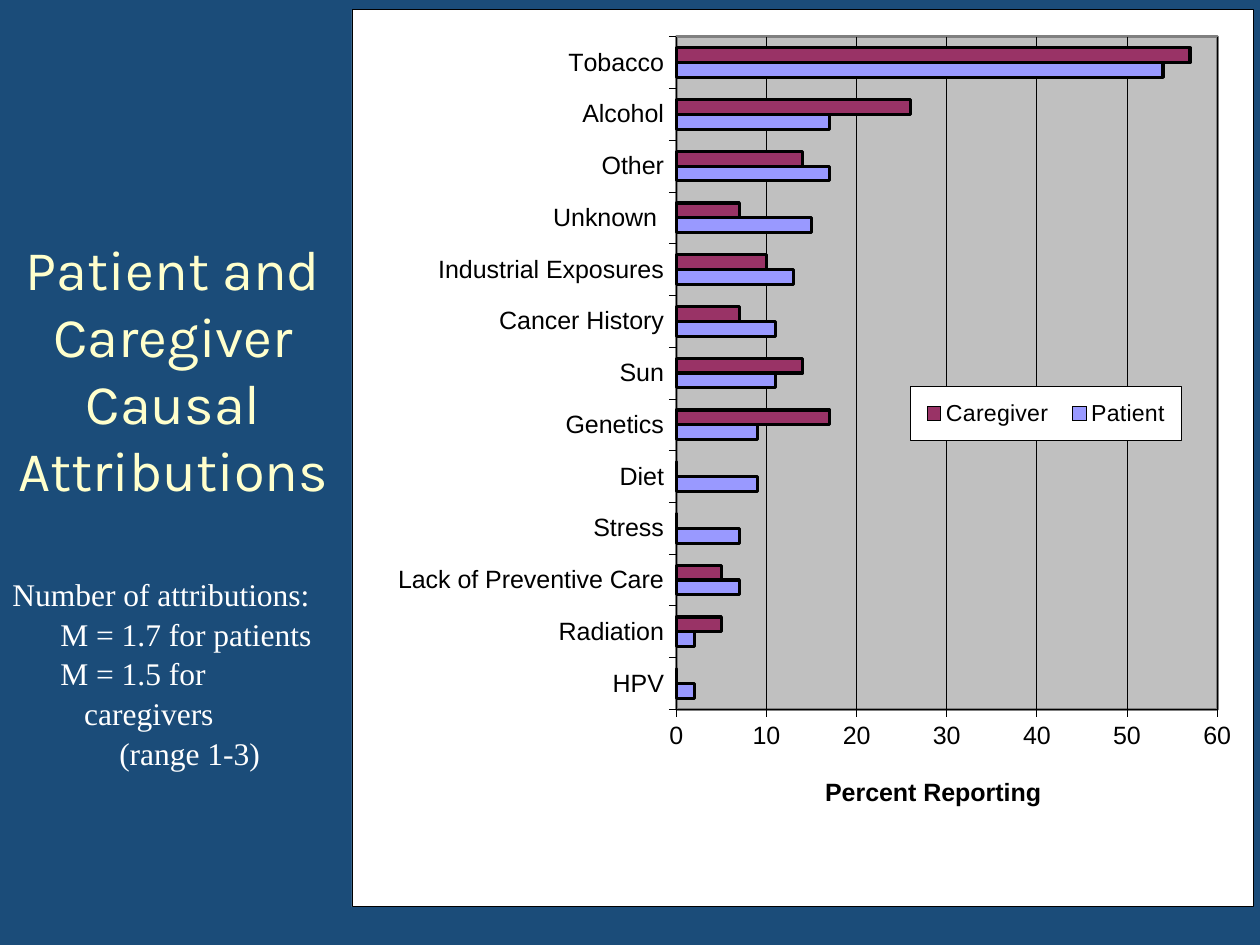
from lxml.etree import SubElement
from pptx import Presentation
from pptx.chart.data import CategoryChartData
from pptx.dml.color import RGBColor
from pptx.enum.chart import XL_CHART_TYPE, XL_LEGEND_POSITION, XL_TICK_MARK
from pptx.enum.text import MSO_ANCHOR, PP_ALIGN
from pptx.oxml import parse_xml
from pptx.oxml.ns import nsdecls, qn
from pptx.util import Inches, Pt

WIDE, HIGH = Inches(10), Inches(7.5)
SIDE = 0.275  # share of the width taken by the text column

ROWS = [  # cause, patient %, caregiver %
    ("HPV", 2, 0), ("Radiation", 2, 5), ("Lack of Preventive Care", 7, 5),
    ("Stress", 7, 0), ("Diet", 9, 0), ("Genetics", 9, 17), ("Sun", 11, 14),
    ("Cancer History", 11, 7), ("Industrial Exposures", 13, 10),
    ("Unknown ", 15, 7), ("Other", 17, 14), ("Alcohol", 17, 26),
    ("Tobacco", 54, 57),
]
TITLE = {"name": "Karla", "size": Pt(32)}
NOTE = {"name": "Times New Roman", "size": Pt(18)}
LABEL = {"name": "Arial", "size": Pt(14.3), "bold": False}
KEY = LABEL | {"size": Pt(13.2)}
HEAD = LABEL | {"bold": True}
THIN, THICK = 0.45, 1.79


def paint(color, tone):
    color.rgb = RGBColor.from_string(tone)


def put(item, values):
    for name, value in values.items():
        setattr(item, name, value)


def style(font, values, tone):
    put(font, values)
    paint(font.color, tone)


def stroke(line, width, tone="000000"):
    line.width = Pt(width)
    paint(line.color, tone)


def place(left, top, width, height):
    """Turn shares of the slide into lengths."""
    return (int(left * WIDE), int(top * HIGH),
            int(width * WIDE), int(height * HIGH))


def add_text(slide, area, lines, look, tone, anchor=MSO_ANCHOR.TOP):
    """Lines hold text, alignment, left margin, first indent and level."""
    frame = slide.shapes.add_textbox(*place(*area)).text_frame
    put(frame, {"word_wrap": True, "vertical_anchor": anchor})
    for num, (text, align, margin, indent, level) in enumerate(lines):
        para = frame.add_paragraph() if num else frame.paragraphs[0]
        put(para, {"alignment": align, "level": level})
        props = para._p.get_or_add_pPr()
        props.set("marL", str(Inches(margin)))
        props.set("indent", str(Inches(indent)))
        run = para.add_run()
        run.text = text
        style(run.font, look, tone)
    return frame


def lay_out(part, after, x, y, w=None, h=None, inner=False):
    """Fix a chart part at shares of the chart's size."""
    for old in part.findall(qn("c:layout")):
        part.remove(old)
    layout = parse_xml(f'<c:layout {nsdecls("c")}><c:manualLayout/></c:layout>')
    marks = [("layoutTarget", "inner")] if inner else []
    marks += [("xMode", "edge"), ("yMode", "edge")]
    marks += [(k, v) for k, v in zip("xywh", (x, y, w, h)) if v is not None]
    for name, value in marks:
        SubElement(layout[0], qn("c:" + name)).set("val", str(value))
    if after:
        part.find(qn(after)).addnext(layout)
    else:
        part.insert(0, layout)


def panel(fill, tone, width):
    return parse_xml(
        f'<c:spPr {nsdecls("c", "a")}>'
        f'<a:solidFill><a:srgbClr val="{fill}"/></a:solidFill>'
        f'<a:ln w="{Pt(width)}"><a:solidFill><a:srgbClr val="{tone}"/>'
        '</a:solidFill></a:ln></c:spPr>')


def set_axes(chart):
    for axis in (chart.category_axis, chart.value_axis):
        put(axis, {"major_tick_mark": XL_TICK_MARK.OUTSIDE,
                   "minor_tick_mark": XL_TICK_MARK.NONE})
        style(axis.tick_labels.font, LABEL, "000000")
        stroke(axis.format.line, THIN)
    put(axis, {"minimum_scale": 0, "maximum_scale": 60, "major_unit": 10,
               "has_major_gridlines": True})
    stroke(axis.major_gridlines.format.line, THIN)
    para = axis.axis_title.text_frame.paragraphs[0]
    run = para.add_run()
    run.text = "Percent Reporting"
    style(run.font, HEAD, "000000")
    lay_out(axis.axis_title._element, "c:tx", 0.52, 0.85)


def set_key(chart):
    chart.has_legend = True
    key = chart.legend
    put(key, {"position": XL_LEGEND_POSITION.RIGHT, "include_in_layout": False})
    style(key.font, KEY, "000000")
    root = key._element
    lay_out(root, "c:legendPos", 0.62, 0.42, 0.3, 0.06)
    root.find(qn("c:txPr")).addprevious(panel("FFFFFF", "000000", THIN))


def add_bars(slide, area):
    causes, *values = zip(*ROWS)
    data = CategoryChartData()
    data.categories = causes
    for name, nums in zip(("Patient", "Caregiver"), values):
        data.add_series(name, nums)
    chart = slide.shapes.add_chart(
        XL_CHART_TYPE.BAR_CLUSTERED, *place(*area), data).chart
    chart.has_title = False
    style(chart.font, LABEL, "000000")

    # Bars
    plot = chart.plots[0]
    put(plot, {"gap_width": 150, "overlap": 0, "vary_by_categories": False})
    for bars, tone in zip(plot.series, ("9999FF", "993366")):
        bars.format.fill.solid()
        paint(bars.format.fill.fore_color, tone)
        stroke(bars.format.line, THICK)

    set_axes(chart)
    set_key(chart)

    # Backgrounds
    root = chart._chartSpace
    root.find(qn("c:chart")).addnext(panel("FFFFFF", "000000", THIN))
    field = root.chart.plotArea
    lay_out(field, None, 0.36, 0.03, 0.6, 0.75, inner=True)
    field.append(panel("C0C0C0", "808080", THICK))


def main():
    deck = Presentation()
    put(deck, {"slide_width": WIDE, "slide_height": HIGH})
    slide = deck.slides.add_slide(deck.slide_layouts[6])
    slide.background.fill.solid()
    paint(slide.background.fill.fore_color, "1B4C79")

    # Title
    add_text(slide, (0, 0.03, SIDE, 0.72),
             [("Patient and Caregiver Causal Attributions",
               PP_ALIGN.CENTER, 0, 0, 0)],
             TITLE, "FFFFCC", MSO_ANCHOR.MIDDLE)

    # Chart
    add_bars(slide, (0.279, 0.01, 0.716, 0.95))

    # Averages
    left = PP_ALIGN.LEFT
    note = add_text(slide, (0, 0.6, SIDE, 0.17), [
        ("Number of attributions:", left, 0.26, -0.26, 0),
        ("M = 1.7 for patients", left, 0.57, -0.19, 1),
        ("M = 1.5 for caregivers", left, 0.57, -0.19, 1),
        ("\t(range 1-3)", PP_ALIGN.CENTER, 0.26, -0.26, 0),
    ], NOTE, "FFFFFF")
    for para in note.paragraphs:
        para.line_spacing = 1.05

    deck.save("out.pptx")


if __name__ == "__main__":
    main()
